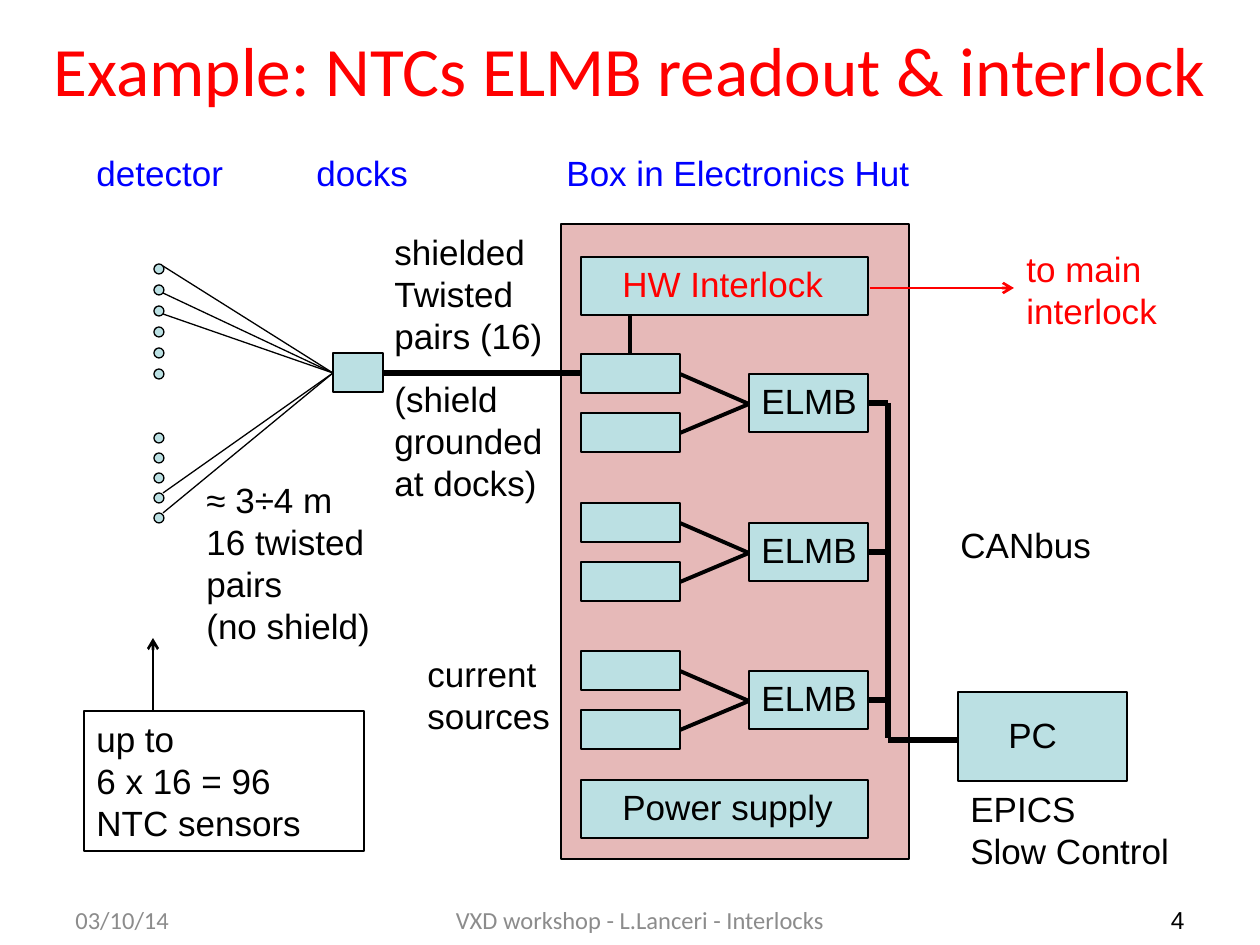
from lxml import etree
from pptx import Presentation
from pptx.dml.color import RGBColor
from pptx.enum.shapes import MSO_CONNECTOR, MSO_SHAPE
from pptx.enum.text import MSO_ANCHOR, PP_ALIGN
from pptx.oxml.ns import qn
from pptx.util import Pt

RECTANGLE = MSO_SHAPE.RECTANGLE
OVAL = MSO_SHAPE.OVAL
STRAIGHT = MSO_CONNECTOR.STRAIGHT
TOP, MIDDLE = MSO_ANCHOR.TOP, MSO_ANCHOR.MIDDLE
LEFT, CENTER, RIGHT = PP_ALIGN.LEFT, PP_ALIGN.CENTER, PP_ALIGN.RIGHT
EMU_PER_PX = 914400 / 126
COLORS = {
    "black": "000000",
    "red": "FF0000",
    "blue": "0000FF",
    "gray": "8C8C8C",
    "unit": "BBE0E3",
    "hut": "E6B9B8",
}


def px(value):
    return round(value * EMU_PER_PX)


def color(name):
    return RGBColor.from_string(COLORS[name])


def add_block(slide, box, fill="unit", kind=RECTANGLE):
    shape = slide.shapes.add_shape(kind, *map(px, box))
    shape.shadow.inherit = False
    if fill:
        shape.fill.solid()
        shape.fill.fore_color.rgb = color(fill)
    else:
        shape.fill.background()
    shape.line.color.rgb = color("black")
    shape.line.width = Pt(0.75)
    return shape


def add_line(slide, start, end, width, tint="black", arrow=False):
    connector = slide.shapes.add_connector(STRAIGHT, *map(px, start + end))
    connector.line.color.rgb = color(tint)
    connector.line.width = Pt(width)
    if arrow:
        line = connector.line._get_or_add_ln()
        etree.SubElement(line, qn("a:tailEnd"), type="arrow")
    etree.SubElement(connector._element.spPr, qn("a:effectLst"))


def write_text(shape, lines, tint="black", size=20, font="Arial",
               align=LEFT, anchor=TOP, wrap=False):
    frame = shape.text_frame
    frame.word_wrap = wrap
    frame.vertical_anchor = anchor
    for index, line in enumerate(lines):
        paragraph = frame.add_paragraph() if index else frame.paragraphs[0]
        paragraph.alignment = align
        run = paragraph.add_run()
        run.text = line
        values = {"size": Pt(size), "name": font}
        for name, value in values.items():
            setattr(run.font, name, value)
        run.font.color.rgb = color(tint)


def add_text(slide, box, *lines, **style):
    write_text(slide.shapes.add_textbox(*map(px, box)), lines, **style)


def add_headings(slide, left, top):
    add_text(slide, (left, top, 1218, 101), "Example: NTCs ELMB readout & interlock",
             tint="red", size=39.6, font="Calibri", align=CENTER, anchor=MIDDLE, wrap=True)
    headings = [(63, 155, "detector"), (283, 117, "docks"), (533, 372, "Box in Electronics Hut")]
    for offset, width, label in headings:
        add_text(slide, (left + offset, top + 127, width, 55), label, tint="blue")


def add_detector(slide, left, top):
    dock_left, dock_middle = left + 179, top + 109
    for first, pitch, count in [(0, 21, 6), (169, 20, 5)]:
        for index in range(count):
            add_block(slide, (left, top + first + index * pitch, 10, 10), kind=OVAL)
    for offset in (2, 29, 50, 229, 249):
        add_line(slide, (left + 9, top + offset), (dock_left, dock_middle), 0.75)
    add_block(slide, (dock_left, top + 89, 50, 39))
    add_line(slide, (dock_left + 50, dock_middle), (left + 427, dock_middle), 3)
    add_text(slide, (left + 40, top + 208, 190, 183),
             "≈ 3÷4 m", "16 twisted", "pairs", "(no shield)")
    add_text(slide, (left + 228, top - 40, 175, 140), "shielded", "Twisted", "pairs (16)")
    add_text(slide, (left + 228, top + 107, 175, 140), "(shield", "grounded", "at docks)")


def add_sensor_note(slide, left, top):
    note = add_block(slide, (left, top, 280, 140), fill=None)
    write_text(note, ["up to", "6 x 16 = 96", "NTC sensors"], wrap=True)
    add_line(slide, (left + 69, top), (left + 69, top - 73), 1.5, arrow=True)


def add_readout(slide, left, top):
    joint = (left + 168, top + 50)
    for offset in (0, 59):
        add_block(slide, (left, top + offset, 99, 39))
        add_line(slide, (left + 99, top + offset + 20), joint, 2.25)
    add_block(slide, (left + 168, top + 20, 119, 58))
    add_text(slide, (left + 168, top + 19, 122, 55), "ELMB")
    add_line(slide, (left + 287, top + 49), (left + 307, top + 49), 3)


def add_hut(slide, left, top):
    add_block(slide, (left, top, 348, 635), fill="hut")
    for offset in (130, 279, 427):
        add_readout(slide, left + 20, top + offset)
    for offset, width, label, tint in [(33, 228, "HW Interlock", "red"),
                                       (556, 238, "Power supply", "black")]:
        add_block(slide, (left + 20, top + offset, 287, 58))
        add_text(slide, (left + 49, top + offset - 1, width, 55), label, tint=tint)
    add_line(slide, (left + 69, top + 91), (left + 69, top + 130), 2.25)
    add_line(slide, (left + 327, top + 179), (left + 327, top + 514), 3)
    add_line(slide, (left + 327, top + 516), (left + 397, top + 516), 3)
    add_line(slide, (left + 309, top + 64), (left + 453, top + 64), 1.5, "red", True)
    add_text(slide, (left + 453, top + 17, 158, 97), "to main", "interlock", tint="red")
    add_text(slide, (left + 387, top + 293, 158, 55), "CANbus")
    add_text(slide, (left - 146, top + 422, 149, 97), "current", "sources")


def add_control(slide, left, top):
    add_block(slide, (left, top, 169, 89))
    add_text(slide, (left + 38, top + 15, 74, 55), "PC")
    add_text(slide, (left, top + 89, 226, 97), "EPICS", "Slow Control")


def add_footer(slide, left, top):
    parts = [
        (0, 204, "03/10/14", "gray", "Calibri", LEFT),
        (204, 746, "VXD workshop - L.Lanceri - Interlocks", "gray", "Calibri", CENTER),
        (973, 161, "4", "black", "Arial", RIGHT),
    ]
    for offset, width, label, tint, font, align in parts:
        add_text(slide, (left + offset, top, width, 50), label, tint=tint, size=14,
                 font=font, align=align, anchor=MIDDLE, wrap=True)


def main():
    presentation = Presentation()
    presentation.slide_width = px(1260)
    presentation.slide_height = px(945)
    slide = presentation.slides.add_slide(presentation.slide_layouts[6])
    add_headings(slide, 21, 18)
    add_hut(slide, 561, 224)
    add_detector(slide, 154, 264)
    add_sensor_note(slide, 84, 711)
    add_control(slide, 958, 692)
    add_footer(slide, 63, 895)
    presentation.save("out.pptx")


if __name__ == "__main__":
    main()
